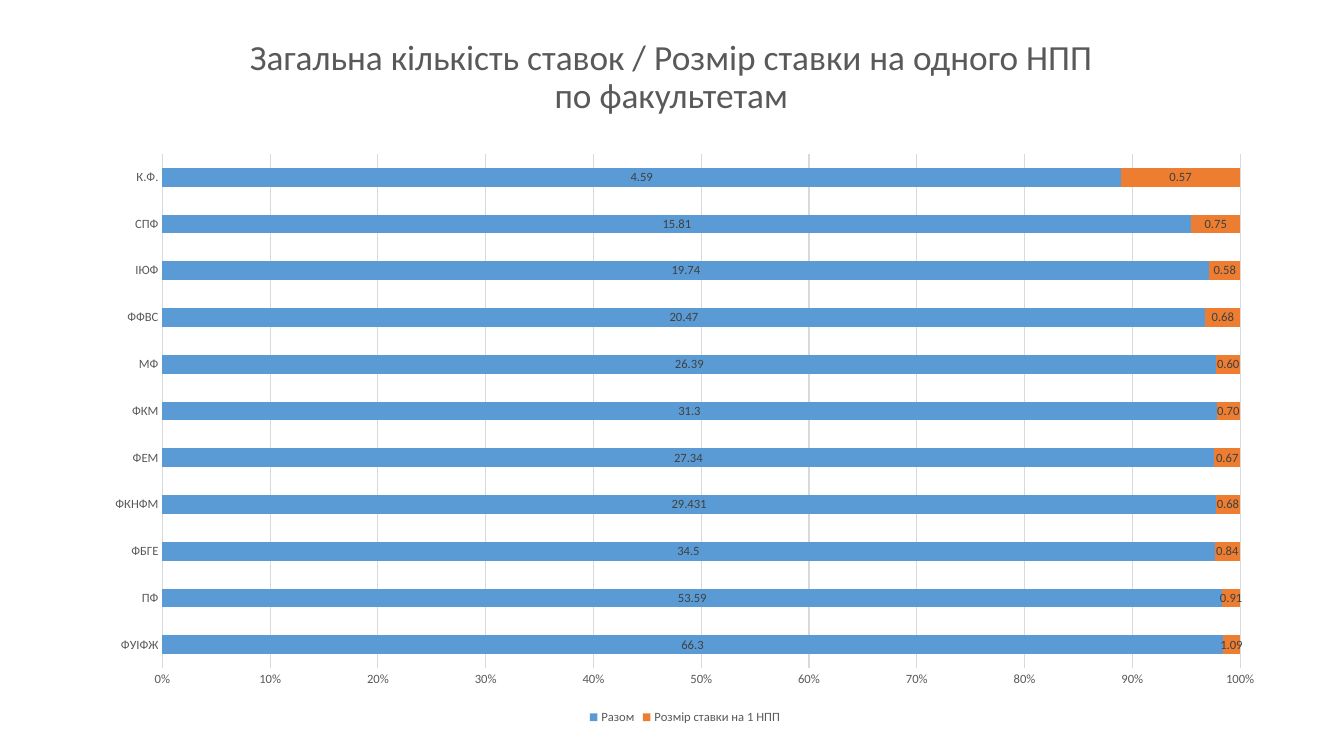
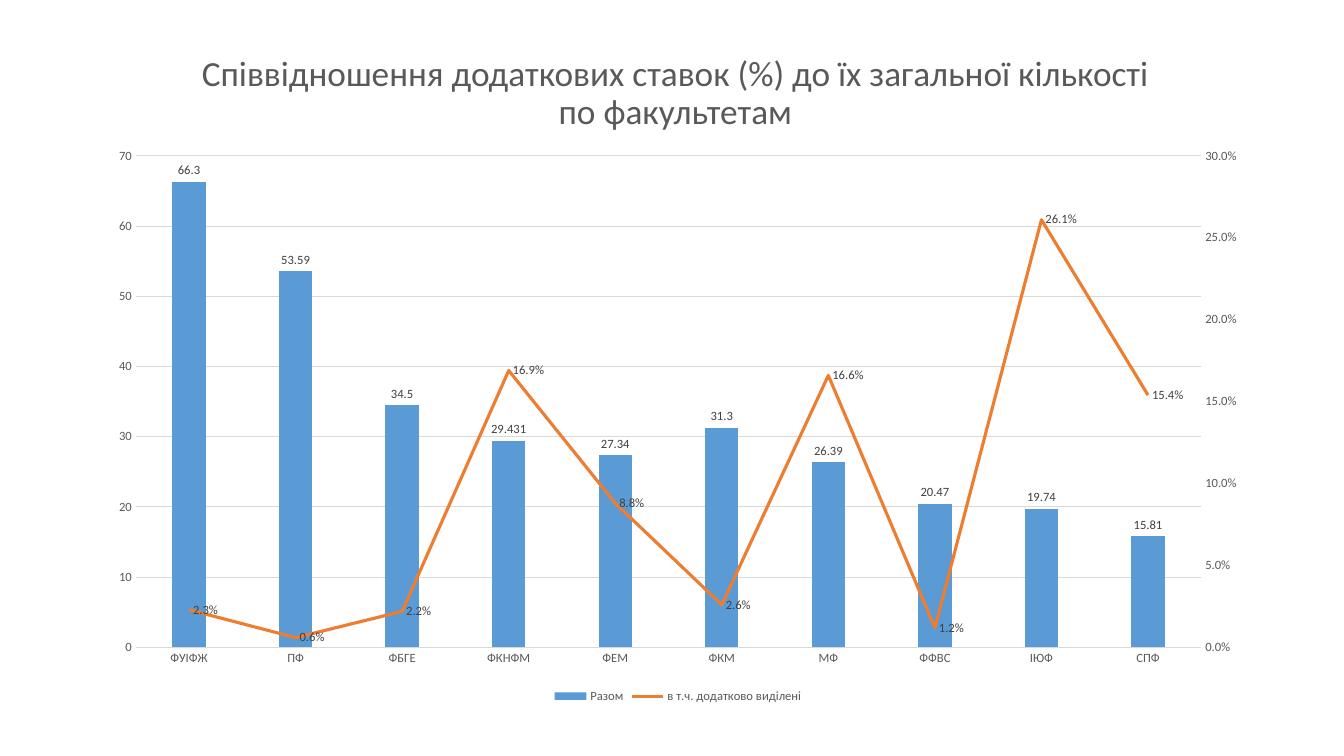
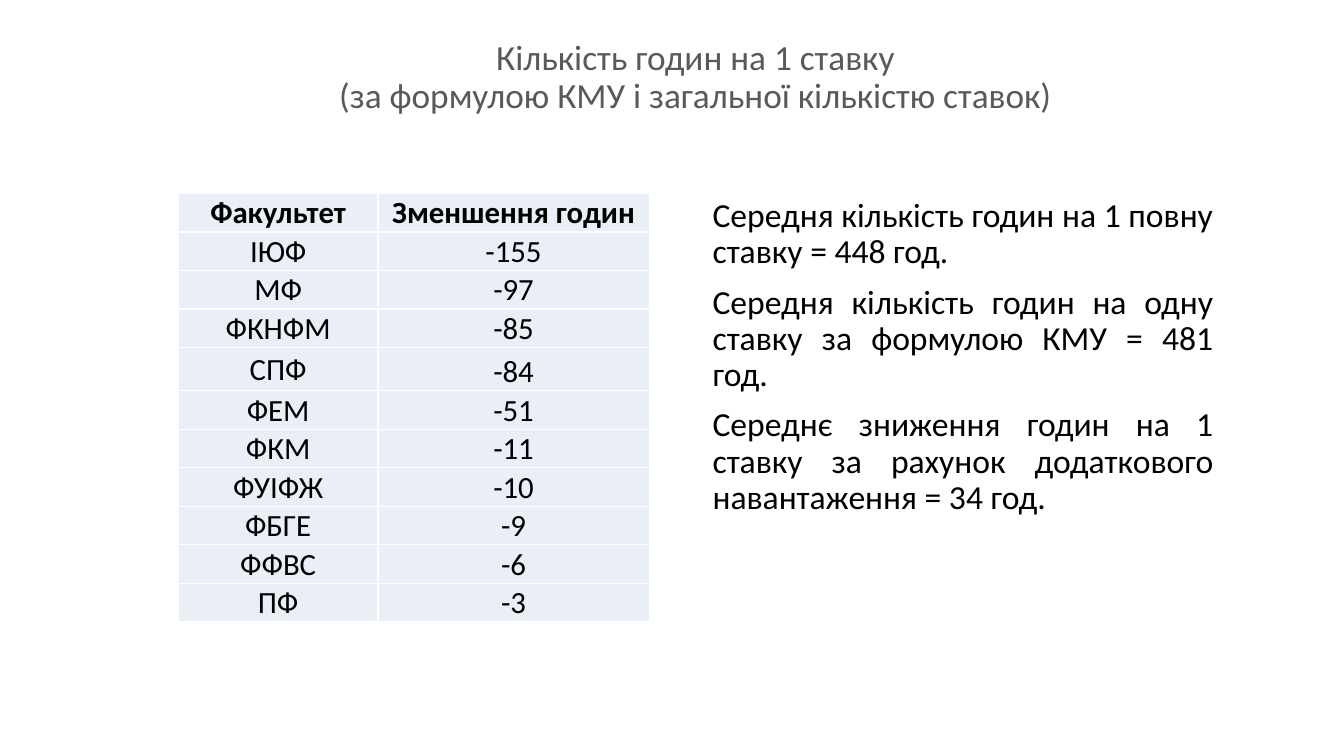
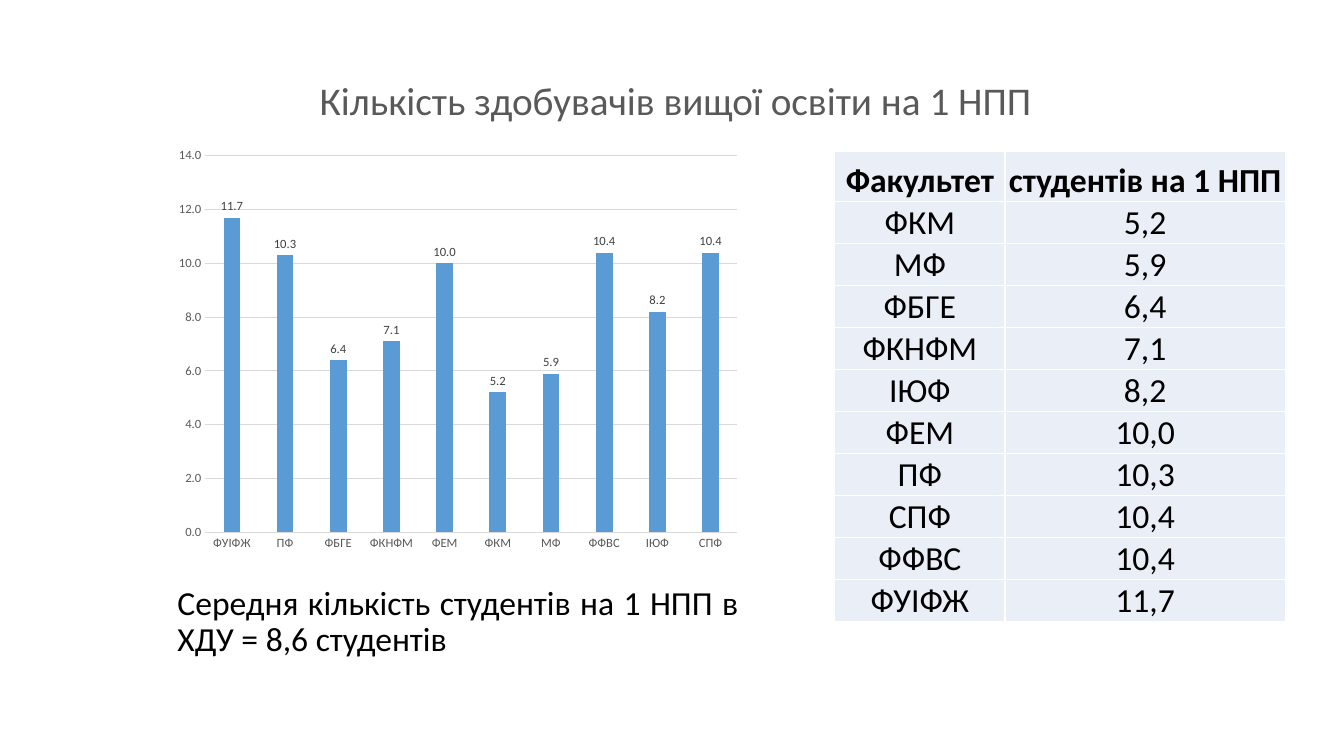
"""Builds four slides on staff posts and student load by faculty."""
from copy import deepcopy
from dataclasses import dataclass

from lxml import etree
from pptx import Presentation
from pptx import util as u
from pptx.chart import data as cd
from pptx.dml import color as col
from pptx.enum import chart as ec
from pptx.enum import text as et
from pptx.oxml import ns
from pptx.oxml import xmlchemy as xc


@dataclass(frozen=True)
class Theme:
    """Colours, font and type sizes."""
    font: str = "Calibri"
    grey: str = "595959"
    label: str = "404040"
    grid: str = "D9D9D9"
    ink: str = "000000"
    white: str = "FFFFFF"
    cell: str = "EAEFF7"
    blue: str = "5B9BD5"
    orange: str = "ED7D31"
    head: float = 25.2
    big: float = 28
    body: float = 24
    small: float = 22
    tiny: float = 9


T = Theme()
LEFT = 119.5
FACS = ["ФУІФЖ", "ПФ", "ФБГЕ", "ФКНФМ", "ФЕМ", "ФКМ", "МФ", "ФФВС", "ІЮФ", "СПФ"]
POSTS = [66.3, 53.59, 34.5, 29.431, 27.34, 31.3, 26.39, 20.47, 19.74, 15.81]
RATES = [1.09, 0.91, 0.84, 0.68, 0.67, 0.7, 0.6, 0.68, 0.58, 0.75]
EXTRA = [0.023, 0.006, 0.022, 0.169, 0.088, 0.026, 0.166, 0.012, 0.261, 0.154]
LOAD = [11.7, 10.3, 6.4, 7.1, 10, 5.2, 5.9, 10.4, 8.2, 10.4]
CUTS = [("ІЮФ", "-155"), ("МФ", "-97"), ("ФКНФМ", "-85"), ("СПФ", "-84"),
        ("ФЕМ", "-51"), ("ФКМ", "-11"), ("ФУІФЖ", "-10"), ("ФБГЕ", "-9"),
        ("ФФВС", "-6"), ("ПФ", "-3")]
RATIO = [("ФКМ", "5,2"), ("МФ", "5,9"), ("ФБГЕ", "6,4"), ("ФКНФМ", "7,1"),
         ("ІЮФ", "8,2"), ("ФЕМ", "10,0"), ("ПФ", "10,3"), ("СПФ", "10,4"),
         ("ФФВС", "10,4"), ("ФУІФЖ", "11,7")]


def rgb(hue):
    """Turn a hex string into a colour."""
    return col.RGBColor.from_string(hue)


def box(at):
    """Turn point values into lengths."""
    return [u.Pt(val) for val in at]


def style(font, size, hue, bold=False):
    """Set the look of a font."""
    font.name, font.size, font.bold = T.font, u.Pt(size), bold
    font.color.rgb = rgb(hue)


def add_run(para, words, size, hue, bold=False):
    """Add one styled run."""
    run = para.add_run()
    run.text = words
    style(run.font, size, hue, bold)


def place(shape, at, anchor):
    """Move a placeholder and fix its text frame."""
    shape.left, shape.top, shape.width, shape.height = box(at)
    frame = shape.text_frame
    frame.word_wrap = True
    frame.auto_size = et.MSO_AUTO_SIZE.NONE
    frame.vertical_anchor = anchor
    return frame


def add_title(slide, at, lines, size=T.head):
    """Fill the title, one run for each line."""
    frame = place(slide.shapes.title, at, et.MSO_ANCHOR.BOTTOM)
    para = frame.paragraphs[0]
    para.alignment, para.line_spacing = et.PP_ALIGN.CENTER, 0.9
    for i, line in enumerate(lines):
        if i:
            para.add_line_break()
        add_run(para, line, size, T.grey)


def add_body(slide, at, paras):
    """Fill the body with justified paragraphs."""
    frame = place(slide.placeholders[1], at, et.MSO_ANCHOR.TOP)
    for i, words in enumerate(paras):
        para = frame.add_paragraph() if i else frame.paragraphs[0]
        para.alignment, para.line_spacing = et.PP_ALIGN.JUSTIFY, 0.9
        para.space_before = u.Pt(10 if i else 0)
        add_run(para, words, T.body, T.ink)


def add_edges(cell):
    """Draw white borders round a cell."""
    props = cell._tc.get_or_add_tcPr()
    for side in ("a:lnL", "a:lnR", "a:lnT", "a:lnB"):
        line = etree.SubElement(props, ns.qn(side), w=str(u.Pt(1)))
        fill = etree.SubElement(line, ns.qn("a:solidFill"))
        etree.SubElement(fill, ns.qn("a:srgbClr"), val=T.white)


def add_cell(cell, words, size, anchor, bold):
    """Fill and style one table cell."""
    add_edges(cell)
    cell.fill.solid()
    cell.fill.fore_color.rgb = rgb(T.cell)
    cell.margin_left = cell.margin_right = cell.margin_top = u.Pt(0.7)
    cell.margin_bottom = 0
    cell.vertical_anchor = anchor
    para = cell.text_frame.paragraphs[0]
    para.alignment = et.PP_ALIGN.CENTER
    add_run(para, words, size, T.ink, bold)


def add_grid(slide, spot, cols, highs, rows, size, last):
    """Add a two-column table; last anchors the value column."""
    at = box([*spot, sum(cols), sum(highs)])
    table = slide.shapes.add_table(len(rows), len(cols), *at).table
    table.first_row = table.horz_banding = False
    for part, wide in zip(table.columns, cols):
        part.width = u.Pt(wide)
    for r, (row, high) in enumerate(zip(rows, highs)):
        table.rows[r].height = u.Pt(high)
        for c, words in enumerate(row):
            anchor = last if c else et.MSO_ANCHOR.MIDDLE
            if r == 0:
                anchor = et.MSO_ANCHOR.BOTTOM
            add_cell(table.cell(r, c), words, size, anchor, r == 0)


def add_chart(slide, at, kind, cats, series, gap, lap, form, legend=True):
    """Add a bar chart with styled axes and legend."""
    data = cd.CategoryChartData()
    data.categories = cats
    for name, vals in series:
        data.add_series(name, vals)
    chart = slide.shapes.add_chart(kind, *box(at), data).chart
    style(chart.font, T.tiny, T.grey)
    chart.has_title = False
    chart.has_legend = legend
    if legend:
        chart.legend.position = ec.XL_LEGEND_POSITION.BOTTOM
        chart.legend.include_in_layout = False
        style(chart.legend.font, T.tiny, T.grey)
    plot = chart.plots[0]
    plot.gap_width, plot.overlap, plot.vary_by_categories = gap, lap, False
    for axis in (chart.category_axis, chart.value_axis):
        axis.major_tick_mark = axis.minor_tick_mark = ec.XL_TICK_MARK.NONE
        style(axis.tick_labels.font, T.tiny, T.grey)
    chart.category_axis.has_major_gridlines = False
    chart.value_axis.has_major_gridlines = True
    chart.value_axis.format.line.fill.background()
    set_form(chart.value_axis.tick_labels, form)
    for part in (chart.category_axis, chart.value_axis.major_gridlines):
        set_line(part, T.grid, 0.75)
    return chart


def set_form(labels, form):
    """Set a number format."""
    labels.number_format, labels.number_format_is_linked = form, False


def set_line(part, hue, width):
    """Set the line of a chart part."""
    part.format.line.color.rgb = rgb(hue)
    part.format.line.width = u.Pt(width)


def add_tags(series, spot, form):
    """Show the values of a series."""
    tags = series.data_labels
    style(tags.font, T.tiny, T.label)
    tags.show_value, tags.position = True, spot
    set_form(tags, form)


def paint(series, hue, spot, form="General"):
    """Fill the bars of a series and label them."""
    series.format.fill.solid()
    series.format.fill.fore_color.rgb = rgb(hue)
    series.invert_if_negative = False
    add_tags(series, spot, form)


def split_line(chart, form):
    """Turn the last bar series into a line on a right axis."""
    area = chart._chartSpace.chart.plotArea
    bars = area.find(ns.qn("c:barChart"))
    last = bars.findall(ns.qn("c:ser"))[-1]
    for flag in last.findall(ns.qn("c:invertIfNegative")):
        last.remove(flag)
    line = xc.OxmlElement("c:lineChart")
    bars.addnext(line)

    def put(tag, val):
        """Add a child with a value to the line plot."""
        etree.SubElement(line, ns.qn(tag), val=val)

    put("c:grouping", "standard")
    put("c:varyColors", "0")
    line.append(last)
    put("c:marker", "1")
    ids = {"c:catAx": "5001", "c:valAx": "5002"}
    end = area.find(ns.qn("c:valAx"))
    for tag, code in ids.items():
        put("c:axId", code)
        axis = deepcopy(area.find(ns.qn(tag)))
        other = next(val for val in ids.values() if val != code)
        axis.find(ns.qn("c:axId")).set("val", code)
        axis.find(ns.qn("c:crossAx")).set("val", other)
        if tag == "c:catAx":
            axis.find(ns.qn("c:delete")).set("val", "1")
        else:
            axis.remove(axis.find(ns.qn("c:majorGridlines")))
            axis.find(ns.qn("c:axPos")).set("val", "r")
            axis.find(ns.qn("c:crosses")).set("val", "max")
            axis.find(ns.qn("c:numFmt")).set("formatCode", form)
        end.addnext(axis)
        end = axis
    return chart.plots[1].series[0]


def show_rates(slide):
    """Posts and post size by faculty."""
    add_title(slide, (LEFT, 31, 720, 55.4),
              ["Загальна кількість ставок / Розмір ставки на одного НПП",
               "по факультетам"])
    chart = add_chart(slide, (65.5, 101.5, 847.4, 419),
                      ec.XL_CHART_TYPE.BAR_STACKED_100, FACS + ["К.Ф."],
                      [("Разом", POSTS + [4.59]),
                       ("Розмір ставки на 1 НПП", RATES + [0.57])],
                      150, 100, "0%")
    looks = [(T.blue, "General"), (T.orange, "0.00")]
    for series, (hue, form) in zip(chart.plots[0].series, looks):
        paint(series, hue, ec.XL_LABEL_POSITION.CENTER, form)


def show_extra(slide):
    """Posts with the share of extra ones."""
    add_title(slide, (LEFT, 42.5, 725.8, 55.4),
              ["Співвідношення додаткових ставок (%) до їх загальної кількості",
               "по факультетам"])
    chart = add_chart(slide, (68.4, 97.9, 831.6, 407.5),
                      ec.XL_CHART_TYPE.COLUMN_CLUSTERED, FACS,
                      [("Разом", POSTS), ("в т.ч. додатково виділені", EXTRA)],
                      219, -27, "General")
    share = split_line(chart, "0.0%")
    paint(chart.plots[0].series[0], T.blue, ec.XL_LABEL_POSITION.OUTSIDE_END)
    set_line(share, T.orange, 2.25)
    share.marker.style = ec.XL_MARKER_STYLE.NONE
    share.smooth = False
    add_tags(share, ec.XL_LABEL_POSITION.RIGHT, "0.0%")


def show_hours(slide):
    """Hours for each post."""
    add_title(slide, (LEFT, 31, 754.6, 55.4),
              ["Кількість годин на 1 ставку",
               "(за формулою КМУ і загальної кількістю ставок)"])
    add_body(slide, (501.8, 138.2, 372.2, 301),
             ["Середня кількість годин на 1 повну ставку = 448 год.",
              "Середня кількість годин на одну ставку за формулою КМУ = 481 год.",
              "Середнє зниження годин на 1 ставку за рахунок додаткового "
              "навантаження = 34 год."])
    add_grid(slide, (127.4, 138.2), (142.6, 193.7),
             [27.5] * 4 + [31] + [27.5] * 6,
             [("Факультет", "Зменшення годин")] + CUTS,
             T.small, et.MSO_ANCHOR.BOTTOM)


def show_load(slide):
    """Students for each teacher."""
    add_title(slide, (LEFT, 36.7, 725.8, 55.4),
              ["Кількість здобувачів вищої освіти на 1 НПП"], T.big)
    add_body(slide, (LEFT, 415.4, 415.4, 82),
             ["Середня кількість студентів на 1 НПП в ХДУ = 8,6 студентів"])
    chart = add_chart(slide, (LEFT, 100, 415.4, 299.5),
                      ec.XL_CHART_TYPE.COLUMN_CLUSTERED, FACS,
                      [("студентів на 1 НПП", LOAD)], 219, -27, "0.0", False)
    paint(chart.plots[0].series[0], T.blue,
          ec.XL_LABEL_POSITION.OUTSIDE_END, "0.0")
    add_grid(slide, (596.2, 108), (121.7, 200.2), [36] + [29.8] * 10,
             [("Факультет", "студентів на 1 НПП")] + RATIO,
             T.body, et.MSO_ANCHOR.MIDDLE)


def main():
    """Build and save the slides."""
    deck = Presentation()
    deck.slide_width, deck.slide_height = u.Pt(960), u.Pt(540)
    plan = [(5, show_rates), (5, show_extra), (0, show_hours), (0, show_load)]
    for kind, show in plan:
        show(deck.slides.add_slide(deck.slide_layouts[kind]))
    deck.save("out.pptx")


if __name__ == "__main__":
    main()
